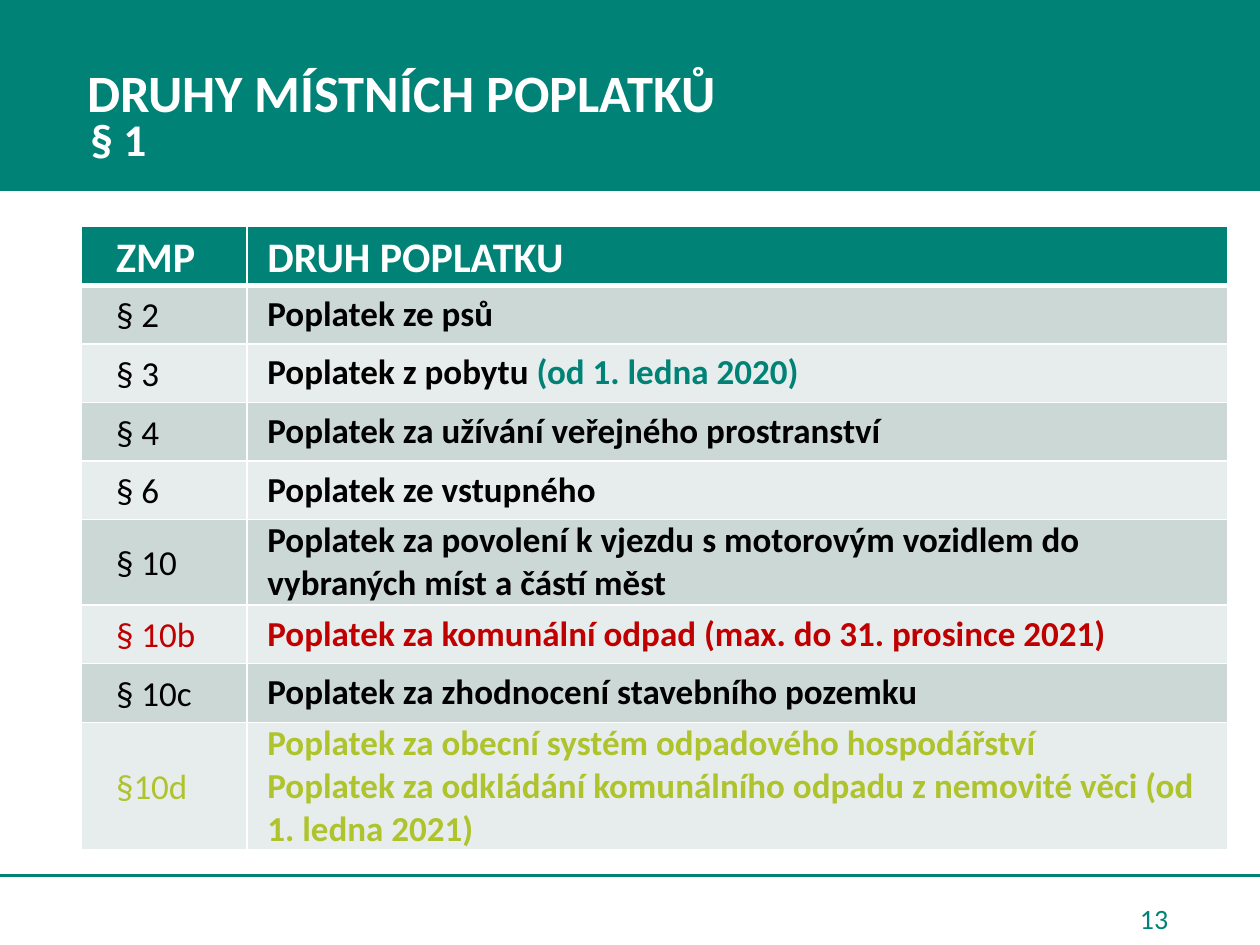
from lxml import etree
from pptx import Presentation
from pptx import util as u
from pptx.dml.color import RGBColor
from pptx.enum import shapes, text
from pptx.oxml import ns

TEAL = RGBColor(0x00, 0x82, 0x76)
WHITE = RGBColor(0xFF, 0xFF, 0xFF)
BLACK = RGBColor(0x00, 0x00, 0x00)
RED = RGBColor(0xC0, 0x00, 0x00)
LIME = RGBColor(0xAF, 0xC3, 0x2D)
ROW_DARK = RGBColor(0xCC, 0xD8, 0xD6)
ROW_LIGHT = RGBColor(0xE7, 0xED, 0xEC)

# Section, colour, paragraphs; each paragraph is a list of (text, colour) runs.
FEES = [
    ("§ 2", BLACK, [[("Poplatek ze psů", BLACK)]]),
    ("§ 3", BLACK, [[("Poplatek z pobytu ", BLACK), ("(od 1. ledna 2020)", TEAL)]]),
    ("§ 4", BLACK, [[("Poplatek za užívání veřejného prostranství", BLACK)]]),
    ("§ 6", BLACK, [[("Poplatek ze vstupného", BLACK)]]),
    ("§ 10", BLACK, [[("Poplatek za povolení k vjezdu s motorovým vozidlem do "
                       "vybraných míst a částí měst", BLACK)]]),
    ("§ 10b", RED, [[("Poplatek za komunální odpad (max. do 31. prosince 2021)", RED)]]),
    ("§ 10c", BLACK, [[("Poplatek za zhodnocení stavebního pozemku", BLACK)]]),
    ("§10d", LIME, [[("Poplatek za obecní systém odpadového hospodářství", LIME)],
                    [("Poplatek za odkládání komunálního odpadu z nemovité věci "
                      "(od 1. ledna 2021)", LIME)]]),
]
COLUMN_WIDTHS = (3.35, 19.76)
COLUMN_INSETS = (0.71, 0.41)
ROW_HEIGHTS = {1: 1.18, 2: 1.73, 3: 2.57}  # by number of text lines
LINES_PER_ROW = (1, 1, 1, 1, 1, 2, 1, 1, 3)


class SlideBuilder:
    font_name = "Calibri"

    def __init__(self, slide):
        self.slide = slide

    def style(self, paragraph, size, color, bold=False):
        font = paragraph.font
        font.name, font.size, font.bold = self.font_name, u.Pt(size), bold
        font.color.rgb = color

    def band(self, left, top, width, height):
        """Draw the title background behind everything else."""
        shape = self.slide.shapes.add_shape(
            shapes.MSO_SHAPE.RECTANGLE, *map(u.Cm, (left, top, width, height)))
        shape.shadow.inherit = False
        shape.fill.solid()
        shape.fill.fore_color.rgb = shape.line.color.rgb = TEAL
        shape.line.width = u.Pt(1)
        shape.element.getparent().insert(2, shape.element)

    def rule(self, left, right, y):
        line = self.slide.shapes.add_connector(
            shapes.MSO_CONNECTOR.STRAIGHT, *map(u.Cm, (left, y, right, y)))
        line.line.color.rgb = TEAL
        line.line.width = u.Pt(2.25)
        etree.SubElement(line.element.spPr, ns.qn("a:effectLst"))

    def placeholder(self, index, words, box, size, indent, spacing, anchor):
        shape = self.slide.placeholders[index]
        shape.left, shape.top, shape.width, shape.height = map(u.Cm, box)
        frame = shape.text_frame
        frame.text = words
        frame.auto_size = text.MSO_AUTO_SIZE.NONE
        frame.vertical_anchor = anchor
        paragraph = frame.paragraphs[0]
        paragraph.alignment = text.PP_ALIGN.LEFT
        paragraph.line_spacing = spacing
        paragraph.space_before = u.Pt(0)
        properties = paragraph._p.get_or_add_pPr()
        properties.set("marL", str(u.Cm(indent)))
        properties.set("indent", "0")
        etree.SubElement(properties, ns.qn("a:buNone"))
        self.style(paragraph, size, WHITE, bold=True)

    def page_number(self, number, box):
        frame = self.slide.shapes.add_textbox(*map(u.Cm, box)).text_frame
        frame.word_wrap = True
        frame.vertical_anchor = text.MSO_ANCHOR.MIDDLE
        frame.text = number
        frame.paragraphs[0].alignment = text.PP_ALIGN.RIGHT
        self.style(frame.paragraphs[0], 16, TEAL)

    def borders(self, cell, top, bottom):
        properties = cell._tc.get_or_add_tcPr()
        for side, width in (("L", 1), ("R", 1), ("T", top), ("B", bottom)):
            line = etree.SubElement(properties, ns.qn(f"a:ln{side}"), w=str(u.Pt(width)))
            fill = etree.SubElement(line, ns.qn("a:solidFill"))
            etree.SubElement(fill, ns.qn("a:srgbClr"), val=str(WHITE))

    def cell(self, cell, paragraphs, size, bold, justified, inset):
        cell.vertical_anchor = text.MSO_ANCHOR.MIDDLE
        cell.margin_left, cell.margin_right = u.Cm(inset), u.Cm(0.18)
        cell.margin_top = cell.margin_bottom = 0
        frame = cell.text_frame
        for number, runs in enumerate(paragraphs):
            paragraph = frame.add_paragraph() if number else frame.paragraphs[0]
            if justified:
                paragraph.alignment = text.PP_ALIGN.JUSTIFY
                paragraph.line_spacing = 1.07
            self.style(paragraph, size, runs[0][1], bold)
            for words, color in runs:
                run = paragraph.add_run()
                run.text = words
                if color != runs[0][1]:
                    run.font.color.rgb = color

    def fee_table(self, left, top):
        rows = [("ZMP", WHITE, [[("DRUH POPLATKU", WHITE)]])] + FEES
        heights = [ROW_HEIGHTS[lines] for lines in LINES_PER_ROW]
        table = self.slide.shapes.add_table(
            len(rows), len(COLUMN_WIDTHS), u.Cm(left), u.Cm(top),
            u.Cm(sum(COLUMN_WIDTHS)), u.Cm(sum(heights))).table
        for column, width in zip(table.columns, COLUMN_WIDTHS):
            column.width = u.Cm(width)
        for index, (section, color, fee) in enumerate(rows):
            table.rows[index].height = u.Cm(heights[index])
            header = index == 0
            background = TEAL if header else ROW_DARK if index % 2 else ROW_LIGHT
            for column, paragraphs in enumerate(([[(section, color)]], fee)):
                cell = table.cell(index, column)
                self.borders(cell, 3 if index == 1 else 1, 3 if header else 1)
                cell.fill.solid()
                cell.fill.fore_color.rgb = background
                self.cell(cell, paragraphs, 24 if header else 20,
                          bold=header or column == 1,
                          justified=header or column == 0,
                          inset=COLUMN_INSETS[column])


def main():
    presentation = Presentation()
    presentation.slide_width, presentation.slide_height = u.Cm(25.4), u.Cm(19.05)
    builder = SlideBuilder(presentation.slides.add_slide(presentation.slide_layouts[1]))
    builder.band(0, 0, 25.5, 3.84)
    builder.rule(-0.08, 25.5, 17.65)
    builder.placeholder(0, "DRUHY MÍSTNÍCH POPLATKŮ", (0, 0, 25.4, 3.84), 30,
                        indent=1.5, spacing=0.9, anchor=text.MSO_ANCHOR.MIDDLE)
    builder.placeholder(1, "§ 1", (1.57, 2.41, 15.21, 1.12), 25.9,
                        indent=0, spacing=0.7, anchor=text.MSO_ANCHOR.TOP)
    builder.page_number("13", (17.98, 18.01, 5.82, 1.02))
    builder.fee_table(1.63, 4.57)
    presentation.save("out.pptx")


if __name__ == "__main__":
    main()
